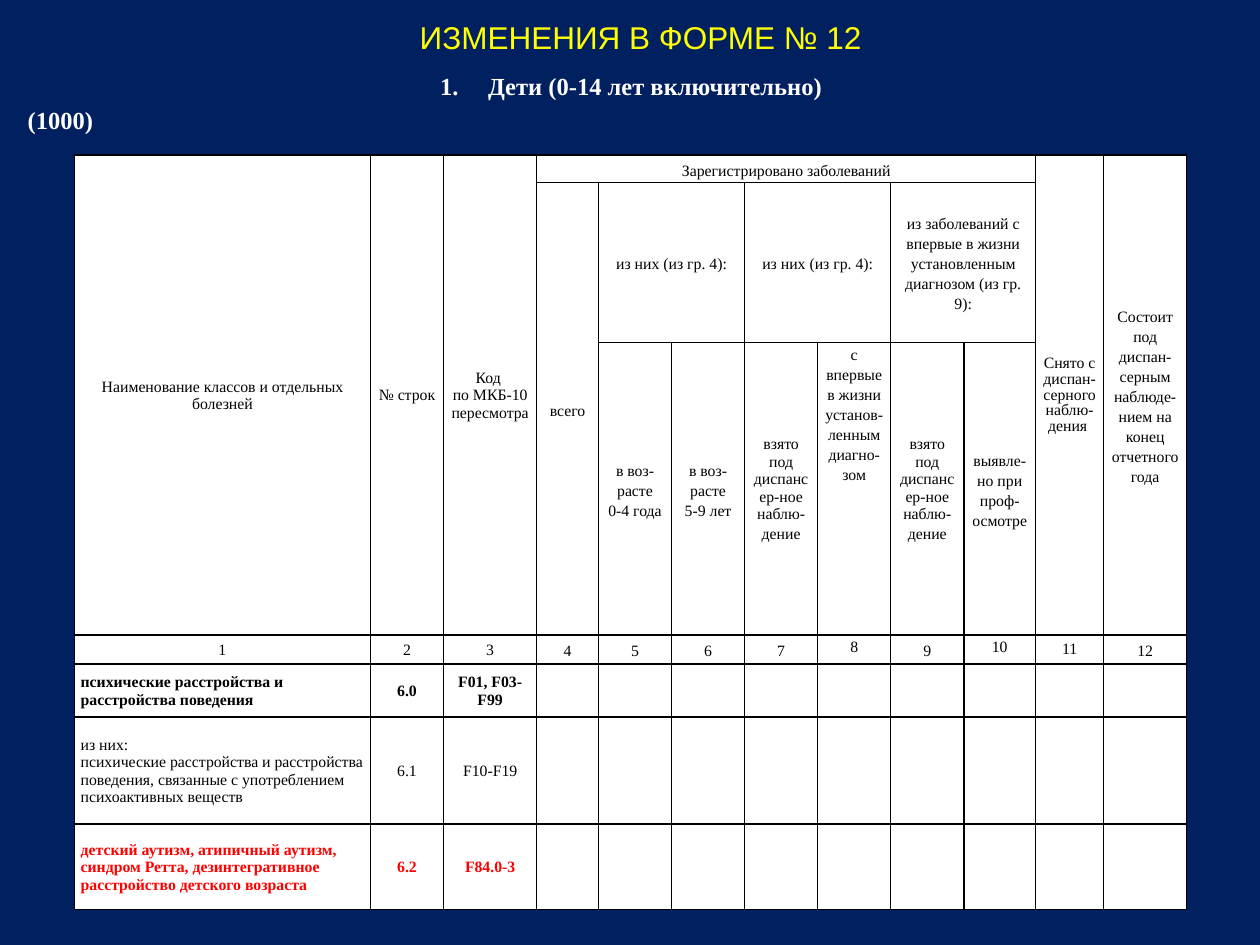
from lxml import etree
from pptx import Presentation
from pptx import util as u
from pptx.dml.color import RGBColor
from pptx.enum import text
from pptx.oxml import ns

NAVY = RGBColor(0x00, 0x20, 0x60)
YELLOW = RGBColor(0xFF, 0xFF, 0x00)
WHITE = RGBColor(0xFF, 0xFF, 0xFF)
BLACK = RGBColor(0x00, 0x00, 0x00)
RED = RGBColor(0xFF, 0x00, 0x00)
SERIF = "Times New Roman"
CENTER = text.PP_ALIGN.CENTER
LEFT = text.PP_ALIGN.LEFT
TOP = text.MSO_ANCHOR.TOP
MIDDLE = text.MSO_ANCHOR.MIDDLE
TIGHT, TIGHTER, LOOSE = u.Pt(10), u.Pt(9), 1.15


def apply(target, values):
    for name, value in values.items():
        setattr(target, name, value)


def style(para, color, values):
    for span in para.runs:
        apply(span.font, values)
        span.font.color.rgb = color


deck = Presentation()
apply(deck, {"slide_width": u.Inches(10), "slide_height": u.Inches(7.5)})
page = deck.slides.add_slide(deck.slide_layouts[1])
page.background.fill.solid()
page.background.fill.fore_color.rgb = NAVY

title, body = page.placeholders
for box, place in ((title, (2.8, 0.09, 4.57, 0.4)), (body, (0.12, 0.51, 9.88, 0.57))):
    apply(box, dict(zip(("left", "top", "width", "height"), map(u.Inches, place))))
    box.text_frame.auto_size = text.MSO_AUTO_SIZE.NONE

title.text_frame.text = "ИЗМЕНЕНИЯ В ФОРМЕ № 12"
title.text_frame.paragraphs[0].alignment = CENTER
style(title.text_frame.paragraphs[0], YELLOW, {"name": "Arial", "size": u.Pt(18)})

body.text_frame.text = "Дети (0-14 лет включительно)\n(1000)"
body_formats = (
    (CENTER, 0.38, 0.1, "buAutoNum", {"type": "arabicPeriod"}),
    (LEFT, 0, 0, "buNone", {}),
)
for para, (align, indent, right, bullet, options) in zip(body.text_frame.paragraphs, body_formats):
    para.alignment = align
    style(para, WHITE, {"name": SERIF, "size": u.Pt(14), "bold": True})
    properties = para._p.get_or_add_pPr()
    properties.set("marL", str(u.Inches(indent)))
    properties.set("marR", str(u.Inches(right)))
    properties.set("indent", str(-u.Inches(indent)))
    etree.SubElement(properties, ns.qn("a:" + bullet), options)

column_widths = [2.35, 0.58, 0.74, 0.49] + [0.58] * 5 + [0.57, 0.54, 0.66]
row_heights = [0.22, 1.27, 2.32, 0.23, 0.42, 0.85, 0.68]
table = page.shapes.add_table(
    len(row_heights), len(column_widths),
    u.Inches(0.59), u.Inches(1.23), u.Inches(8.82), u.Inches(5.98),
).table
apply(table, {"first_row": False, "horz_banding": False})
for column, width in zip(table.columns, column_widths):
    column.width = u.Inches(width)
for row, height in zip(table.rows, row_heights):
    row.height = u.Inches(height)

for cell in table.iter_cells():
    apply(cell, {
        "margin_left": u.Inches(0.05), "margin_right": u.Inches(0.05),
        "margin_top": u.Inches(0.01), "margin_bottom": 0,
        "vertical_anchor": MIDDLE,
    })
    properties = cell._tc.get_or_add_tcPr()
    for side in ("lnL", "lnR", "lnT", "lnB"):
        border = etree.SubElement(properties, ns.qn("a:" + side), w=str(u.Pt(1)))
        paint = etree.SubElement(border, ns.qn("a:solidFill"))
        etree.SubElement(paint, ns.qn("a:srgbClr"), val=str(BLACK))
    cell.fill.solid()
    cell.fill.fore_color.rgb = WHITE

under_care = "взято под\nдиспансер-ное наблю-\nдение"
headings = [
    (0, 0, 3, 1, TIGHT, "Наименование классов и отдельных болезней"),
    (0, 1, 3, 1, TIGHT, "№ строк"),
    (0, 2, 3, 1, TIGHT, "Код \nпо МКБ-10\nпересмотра"),
    (0, 3, 1, 7, LOOSE, "Зарегистрировано заболеваний"),
    (0, 10, 3, 1, TIGHTER, "Снято с диспан-серного наблю-дения "),
    (0, 11, 3, 1, LOOSE, "Состоит под диспан-серным наблюде-нием на конец отчетного года"),
    (1, 3, 2, 1, LOOSE, "всего"),
    (1, 4, 1, 2, LOOSE, "из них (из гр. 4):"),
    (1, 6, 1, 2, LOOSE, "из них (из гр. 4):"),
    (1, 8, 1, 2, LOOSE, "из заболеваний с впервые в жизни установленным диагнозом (из гр. 9):"),
    (2, 4, 1, 1, LOOSE, "в воз-расте\n0-4 года"),
    (2, 5, 1, 1, LOOSE, "в воз-\nрасте\n5-9 лет"),
    (2, 6, 1, 1, TIGHT, under_care),
    (2, 7, 1, 1, LOOSE, "с впервые\nв жизни\nустанов-\nленным\nдиагно-зом"),
    (2, 8, 1, 1, TIGHT, under_care),
    (2, 9, 1, 1, LOOSE, "выявле-но при проф-осмотре"),
]
number_spacing = [TIGHT] * 3 + [LOOSE] * 7 + [TIGHTER, LOOSE]
numbers = [(3, i, 1, 1, spacing, str(i + 1)) for i, spacing in enumerate(number_spacing)]
diseases = [
    ("психические расстройства и расстройства поведения", "6.0", "F01, F03-F99"),
    ("из них:\nпсихические расстройства и расстройства поведения, "
     "связанные с употреблением психоактивных веществ", "6.1", "F10-F19"),
    ("детский аутизм, атипичный аутизм, синдром Ретта, "
     "дезинтегративное расстройство детского возраста", "6.2", "F84.0-3"),
]
entries = [
    (i, j, 1, 1, TIGHT, words)
    for i, disease in enumerate(diseases, 4) for j, words in enumerate(disease)
]

for i, j, tall, wide, spacing, words in headings + numbers + entries:
    cell = table.cell(i, j)
    if tall * wide > 1:
        cell.merge(table.cell(i + tall - 1, j + wide - 1))
    cell.text_frame.text = words
    for para in cell.text_frame.paragraphs:
        apply(para, {
            "alignment": LEFT if i > 3 and j == 0 else CENTER,
            "line_spacing": spacing,
        })
        style(para, RED if i == 6 else BLACK,
              {"name": SERIF, "size": u.Pt(9), "bold": i in (4, 6)})

for j in (6, 8):
    table.cell(2, j).text_frame.paragraphs[-1].line_spacing = LOOSE
for i, j in ((2, 7), (3, 7), (3, 9)):
    table.cell(i, j).vertical_anchor = TOP

deck.save("out.pptx")
